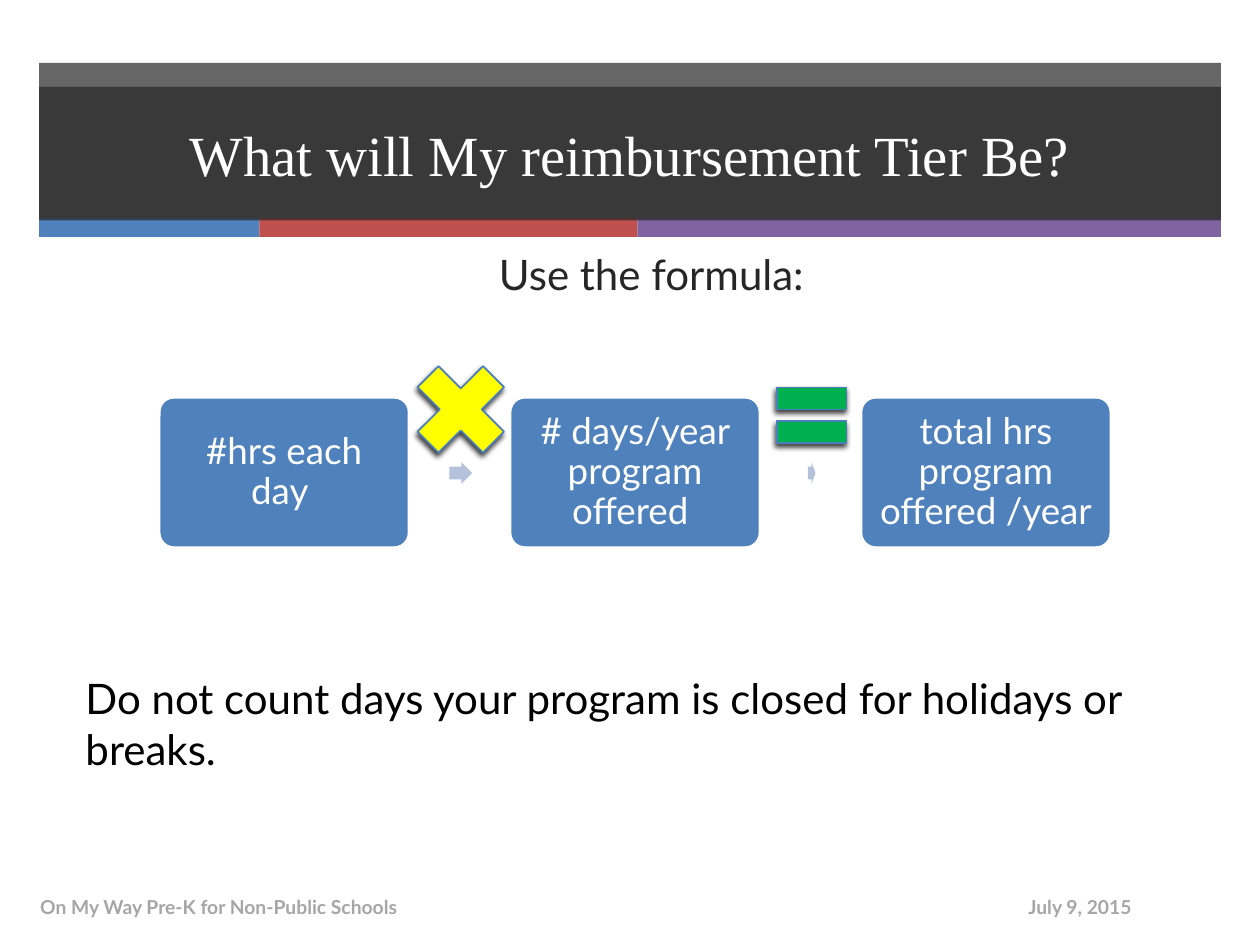
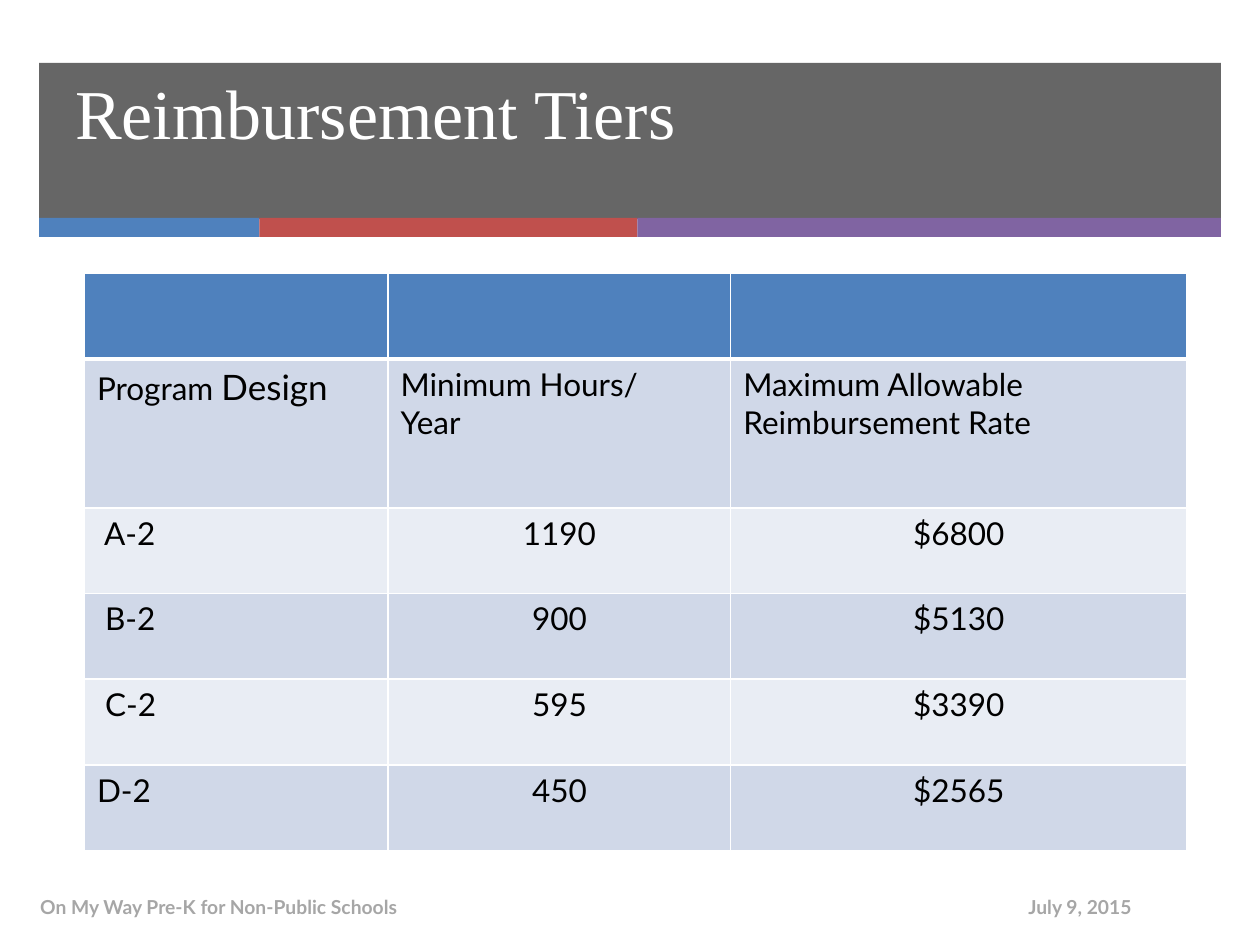
from dataclasses import dataclass

from lxml.etree import SubElement
from pptx import Presentation
from pptx.dml.color import RGBColor
from pptx.enum.shapes import MSO_SHAPE as Preset
from pptx.enum.text import MSO_ANCHOR as Anchor, PP_ALIGN as Align
from pptx.oxml.ns import qn
from pptx.util import Inches, Pt


@dataclass(frozen=True)
class Theme:
    title_font: str = "Times New Roman"
    body_font: str = "Lato"
    white: str = "FFFFFF"
    black: str = "000000"
    charcoal: str = "262626"
    footer_gray: str = "A6A6A6"
    blue: str = "4F81BD"
    red: str = "C0504D"
    purple: str = "8064A2"
    pale_arrow: str = "B3C1DB"
    operator_line: str = "4B7EBC"
    yellow: str = "FFFF00"
    green: str = "00B050"
    row_dark: str = "D0D8E8"
    row_light: str = "E9EDF4"
    formula_title_size: float = 32.4
    tiers_title_size: float = 40
    body_size: float = 24
    step_size: float = 21
    accent_cell_size: float = 20
    cell_size: float = 18
    footer_size: float = 11


THEME = Theme()
BAND_BOX = (0.31, 0.5, 9.38, 1.24)


def rgb(color):
    return RGBColor.from_string(color)


def add_span(para, text, size, color=THEME.black, font=THEME.body_font, bold=False):
    span = para.add_run()
    span.text = text
    span.font.size = Pt(size)
    span.font.name = font
    span.font.bold = bold
    span.font.color.rgb = rgb(color)


def write(frame, text, align=Align.LEFT, anchor=Anchor.TOP, spacing=None,
          inset=None, **span_format):
    """Fill a text frame, one paragraph for each line of text."""
    frame.word_wrap = True
    frame.vertical_anchor = anchor
    if inset is not None:
        frame.margin_left = frame.margin_right = Inches(inset)
        frame.margin_top = frame.margin_bottom = Inches(inset)
    for index, line in enumerate(text.split("\n")):
        para = frame.add_paragraph() if index else frame.paragraphs[0]
        para.alignment = align
        if spacing:
            para.line_spacing = spacing
        add_span(para, line, **span_format)


def add_text(page, box, text, **text_format):
    text_box = page.shapes.add_textbox(*map(Inches, box))
    write(text_box.text_frame, text, **text_format)


def add_block(page, preset, box, fill, line=None, line_width=1, alpha=None):
    block = page.shapes.add_shape(preset, *map(Inches, box))
    block.shadow.inherit = False
    block.fill.solid()
    block.fill.fore_color.rgb = rgb(fill)
    if alpha is not None:
        color = block.fill._xPr.find(qn("a:solidFill"))[0]
        SubElement(color, qn("a:alpha"), val=str(alpha * 1000))
    if line:
        block.line.color.rgb = rgb(line)
        block.line.width = Pt(line_width)
    else:
        block.line.fill.background()
    return block


def cast_shadow(block):
    effects = block._element.spPr.find(qn("a:effectLst"))
    shadow = SubElement(effects, qn("a:outerShdw"), blurRad=str(Pt(3)),
                        dist=str(Pt(2)), dir=str(110 * 60000), rotWithShape="0")
    color = SubElement(shadow, qn("a:srgbClr"), val=THEME.black)
    SubElement(color, qn("a:alpha"), val="75000")


def add_band(page, box):
    left, top, width, height = box
    add_block(page, Preset.RECTANGLE, box, THEME.charcoal, alpha=70)
    stripes = ((THEME.blue, 1.75), (THEME.red, 3),
               (THEME.purple, width - 4.75))
    for color, stripe_width in stripes:
        stripe_box = (left, top + height - 0.01, stripe_width, 0.15)
        add_block(page, Preset.RECTANGLE, stripe_box, color)
        left += stripe_width


def add_footer(page, top):
    footer_format = dict(anchor=Anchor.MIDDLE, size=THEME.footer_size,
                         color=THEME.footer_gray, bold=True)
    add_text(page, (5.83, top, 3.25, 0.4), "July 9, 2015",
             align=Align.RIGHT, **footer_format)
    add_text(page, (0.22, top, 5.11, 0.4),
             "On My Way Pre-K for Non-Public Schools", **footer_format)


def add_page(deck):
    page = deck.slides.add_slide(deck.slide_layouts[6])
    add_band(page, BAND_BOX)
    add_footer(page, 7)
    return page


def add_formula(page, box):
    """Draw three steps with an arrow and an operator centred in each gap."""
    left, top, width, height = box
    step_width = 1.99
    gap = (width - 3 * step_width) / 2
    steps = ("#hrs each day ", "# days/year program offered ",
             "total hrs program offered /year")
    for index, text in enumerate(steps):
        step_box = (left + index * (step_width + gap), top, step_width, height)
        step = add_block(page, Preset.ROUNDED_RECTANGLE, step_box, THEME.blue,
                         line=THEME.white, line_width=2)
        step.adjustments[0] = 0.1
        write(step.text_frame, text, align=Align.CENTER, anchor=Anchor.MIDDLE,
              spacing=0.9, inset=0.09, size=THEME.step_size, color=THEME.white)

    operators = ((Preset.MATH_MULTIPLY, 1, -0.4, THEME.yellow, 0.18),
                 (Preset.MATH_EQUAL, 0.75, -0.23, THEME.green, 0.06))
    for index, (preset, size, rise, color, arrow_width) in enumerate(operators):
        center = left + (index + 1) * (step_width + gap) - gap / 2 + 0.01
        arrow_box = (center - arrow_width / 2, top + height / 2 - 0.08,
                     arrow_width, 0.17)
        arrow = add_block(page, Preset.RIGHT_ARROW, arrow_box, THEME.pale_arrow)
        arrow.adjustments[0] = 0.6
        arrow.adjustments[1] = 0.5
        operator_box = (center - size / 2, top + rise, size, size)
        cast_shadow(add_block(page, preset, operator_box, color,
                              line=THEME.operator_line))


def set_borders(cell, **widths):
    """Draw white cell borders; widths in points are keyed by side L, R, T, B."""
    properties = cell._tc.get_or_add_tcPr()
    for side in "LRTB":
        line = SubElement(properties, qn(f"a:ln{side}"),
                          w=str(Pt(widths.get(side, 1))))
        fill = SubElement(line, qn("a:solidFill"))
        SubElement(fill, qn("a:srgbClr"), val=THEME.white)


def add_tier_table(page, box):
    rows = (
        ("", "", ""),
        ("Program ", "Minimum Hours/\nYear",
         "Maximum Allowable Reimbursement Rate"),
        (" A-2", "1190", "$6800"),
        (" B-2", "900", "$5130"),
        (" C-2", "595", "$3390"),
        ("D-2", "450", "$2565"),
    )
    table = page.shapes.add_table(len(rows), 3, *map(Inches, box)).table
    for column, width in zip(table.columns, (2.41, 2.72, 3.62)):
        column.width = Inches(width)
    for row_index, texts in enumerate(rows):
        table.rows[row_index].height = Inches(1.18 if row_index == 1 else 0.68)
        if row_index == 0:
            fill, borders = THEME.blue, {"B": 3}
        else:
            fill = THEME.row_dark if row_index % 2 else THEME.row_light
            borders = {"T": 3} if row_index == 1 else {}
        for column_index, text in enumerate(texts):
            cell = table.cell(row_index, column_index)
            set_borders(cell, **borders)
            cell.fill.solid()
            cell.fill.fore_color.rgb = rgb(fill)
            if text:
                centered = row_index > 1 and column_index > 0
                write(cell.text_frame, text, size=THEME.cell_size,
                      align=Align.CENTER if centered else Align.LEFT)
    design_para = table.cell(1, 0).text_frame.paragraphs[0]
    add_span(design_para, "Design", THEME.accent_cell_size)


def build_formula_page(deck):
    page = add_page(deck)
    left, top, width, _ = BAND_BOX
    title = add_block(page, Preset.RECTANGLE, (left, top + 0.19, width, 1.06),
                      THEME.charcoal, alpha=70)
    write(title.text_frame, "What will My reimbursement Tier Be?",
          align=Align.CENTER, anchor=Anchor.MIDDLE, font=THEME.title_font,
          size=THEME.formula_title_size, color=THEME.white)
    add_text(page, (0.67, 1.92, 9, 0.6), "Use the formula:",
             align=Align.CENTER, size=THEME.body_size, color=THEME.charcoal)
    add_formula(page, (1.26, 3.15, 7.56, 1.2))
    add_text(page, (0.58, 5.29, 8.92, 0.91),
             "Do not count days your program is closed for holidays or breaks.",
             size=THEME.body_size)


def build_tiers_page(deck):
    page = add_page(deck)
    add_text(page, (0.5, 0.5, 9.17, 0.8), "Reimbursement Tiers",
             font=THEME.title_font, size=THEME.tiers_title_size,
             color=THEME.white)
    add_tier_table(page, (0.67, 2.17, 8.75, 4.58))


def main():
    deck = Presentation()
    deck.slide_width, deck.slide_height = Inches(10), Inches(7.5)
    build_formula_page(deck)
    build_tiers_page(deck)
    deck.save("out.pptx")


if __name__ == "__main__":
    main()
